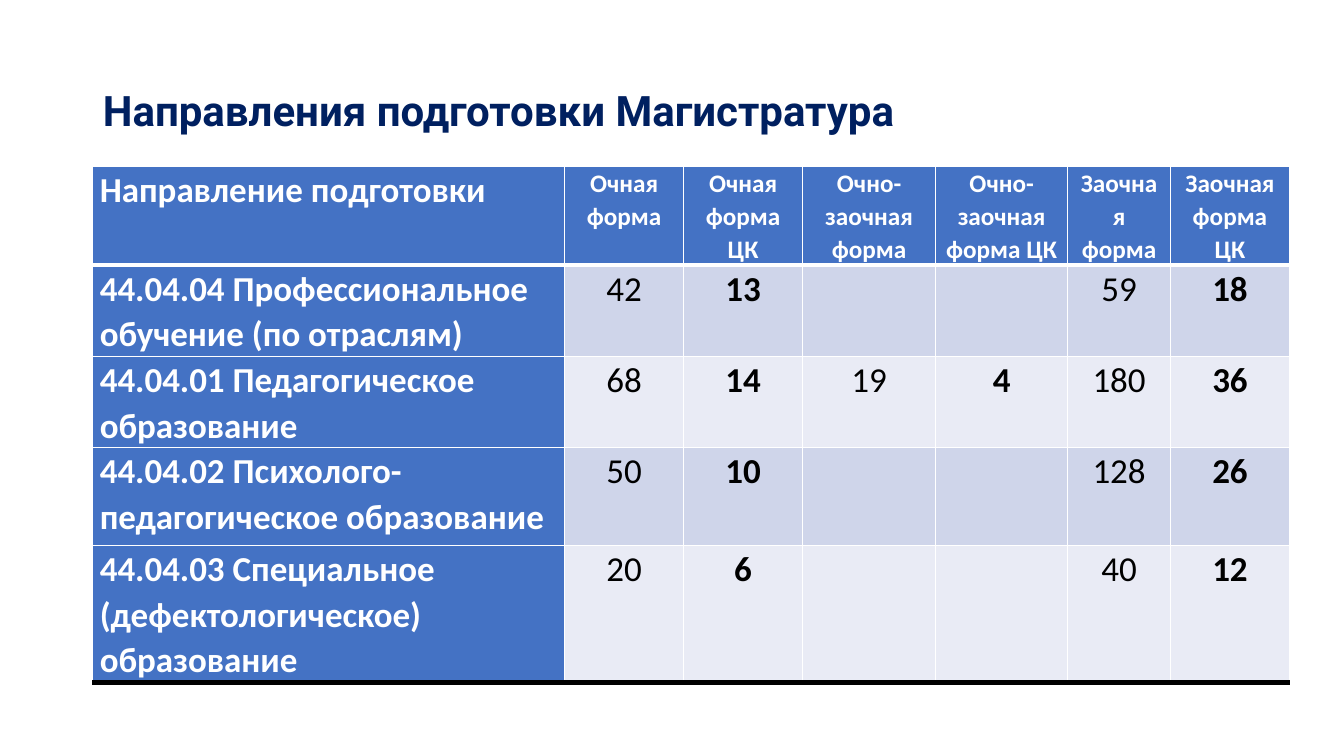
from pptx import Presentation
from pptx.dml.color import RGBColor
from pptx.enum.text import MSO_ANCHOR, MSO_AUTO_SIZE, PP_ALIGN
from pptx.oxml.ns import qn
from pptx.util import Inches, Pt
from lxml.etree import SubElement

COLORS = {
    "title": "002060",
    "header": "4472C4",
    "band_dark": "CFD5EA",
    "band_light": "E9EBF5",
    "white": "FFFFFF",
    "black": "000000",
}

COL_WIDTHS = [4.68, 1.18, 1.18, 1.32, 1.31, 1.02, 1.18]
ROW_HEIGHTS = [0.92, 0.85, 0.85, 0.97, 1.32]
ROWS = [
    ["Направление подготовки", "Очная форма", "Очная форма ЦК", "Очно-заочная форма",
     "Очно-заочная форма ЦК", "Заочная форма", "Заочная форма ЦК"],
    ["44.04.04 Профессиональное обучение (по отраслям)", "42", "13", "", "", "59", "18"],
    ["44.04.01 Педагогическое образование", "68", "14", "19", "4", "180", "36"],
    ["44.04.02 Психолого-педагогическое образование", "50", "10", "", "", "128", "26"],
    ["44.04.03 Специальное (дефектологическое) образование", "20", "6", "", "", "40", "12"],
]


def rgb(name):
    return RGBColor.from_string(COLORS[name])


def format_paragraph(p, font, size, color, bold, align, spacing):
    p.alignment = align
    p.line_spacing = spacing
    for r in p.runs:
        r.font.name = font
        r.font.size = Pt(size)
        r.font.bold = bold
        r.font.color.rgb = rgb(color)


def set_borders(cell, top, bottom):
    """Draw the four cell edges; top and bottom are (colour, points) pairs."""
    side = ("white", 1)
    tc_pr = cell._tc.get_or_add_tcPr()
    for tag, (color, width) in zip(("a:lnL", "a:lnR", "a:lnT", "a:lnB"),
                                   (side, side, top, bottom)):
        ln = SubElement(tc_pr, qn(tag), w=str(Pt(width)))
        fill = SubElement(ln, qn("a:solidFill"))
        SubElement(fill, qn("a:srgbClr"), val=COLORS[color])


def add_title(slide, left, top, width, height):
    title = slide.shapes.title
    title.left, title.top, title.width, title.height = left, top, width, height
    tf = title.text_frame
    tf.text = "Направления подготовки Магистратура"
    tf.word_wrap = True
    tf.auto_size = MSO_AUTO_SIZE.NONE
    tf.vertical_anchor = MSO_ANCHOR.MIDDLE
    format_paragraph(tf.paragraphs[0], "Roboto", 30, "title", True, PP_ALIGN.LEFT, 0.9)


def fill_cell(cell, row, col):
    text = ROWS[row][col]
    is_label = row == 0 or col == 0
    edges = {0: ("white", 3), len(ROWS): ("black", 4.5)}
    set_borders(cell, edges[0] if row == 1 else ("white", 1),
                edges.get(row, edges[len(ROWS)] if row == len(ROWS) - 1 else ("white", 1)))
    cell.fill.solid()
    band = "band_dark" if row % 2 else "band_light"
    cell.fill.fore_color.rgb = rgb("header" if is_label else band)
    cell.margin_left = cell.margin_right = Inches(0.07)
    cell.margin_top = cell.margin_bottom = 0
    if text:
        cell.text_frame.text = text
        format_paragraph(
            cell.text_frame.paragraphs[0], "Calibri",
            18 if row == 0 and col else 25,
            "white" if is_label else "black",
            is_label or col % 2 == 0,
            PP_ALIGN.CENTER if col else PP_ALIGN.LEFT, 1.07)


def add_programme_table(slide, left, top):
    table = slide.shapes.add_table(
        len(ROWS), len(COL_WIDTHS), left, top,
        Inches(sum(COL_WIDTHS)), Inches(sum(ROW_HEIGHTS))).table
    table.first_col = True
    for column, width in zip(table.columns, COL_WIDTHS):
        column.width = Inches(width)
    for row, height in zip(table.rows, ROW_HEIGHTS):
        row.height = Inches(height)
    for row in range(len(ROWS)):
        for col in range(len(COL_WIDTHS)):
            fill_cell(table.cell(row, col), row, col)


def main():
    prs = Presentation()
    prs.slide_width, prs.slide_height = Inches(13.33), Inches(7.5)
    slide = prs.slides.add_slide(prs.slide_layouts[5])
    left = Inches(0.92)
    add_title(slide, left, Inches(0.4), Inches(11.5), Inches(1.45))
    add_programme_table(slide, left, Inches(1.65))
    prs.save("out.pptx")


if __name__ == "__main__":
    main()
